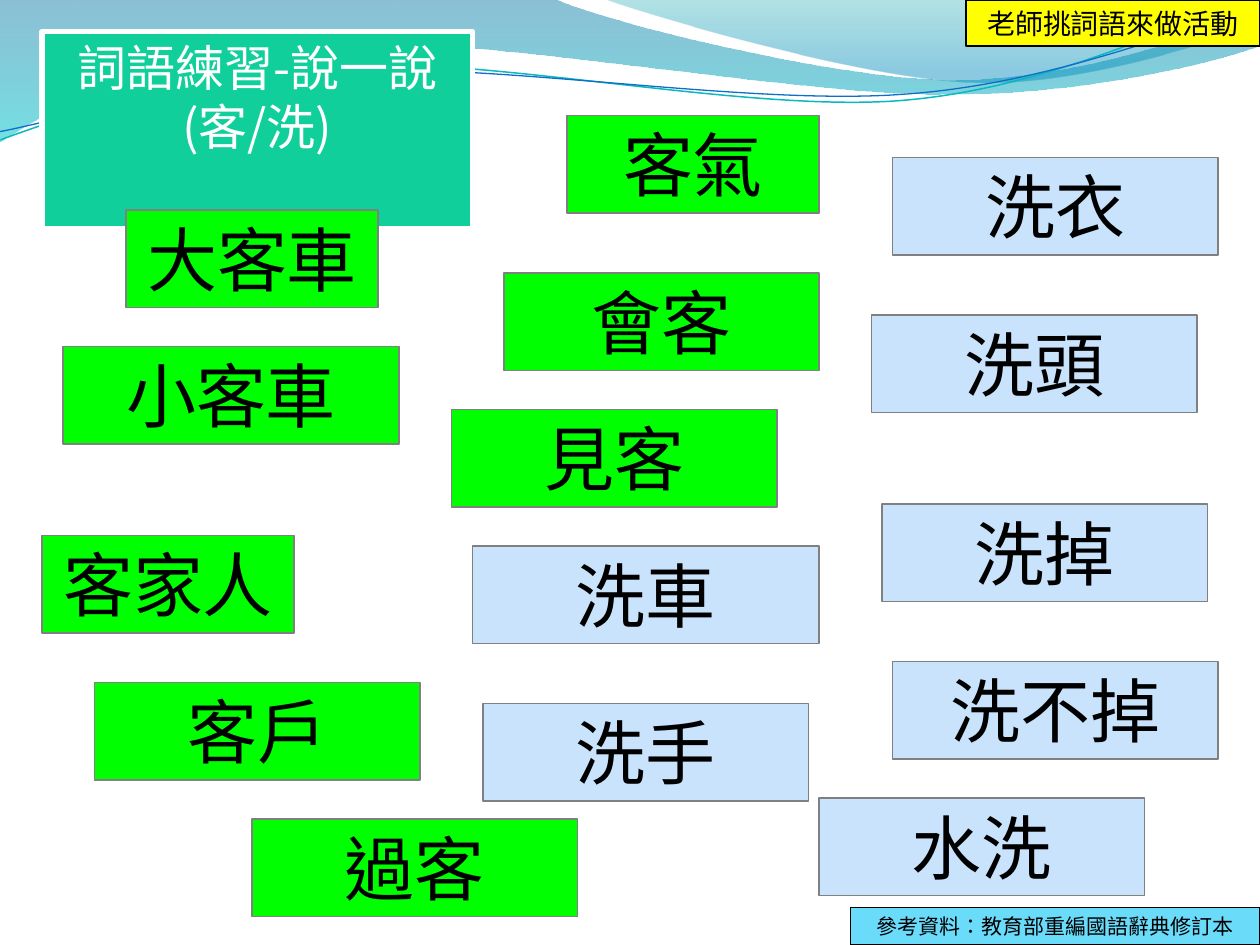
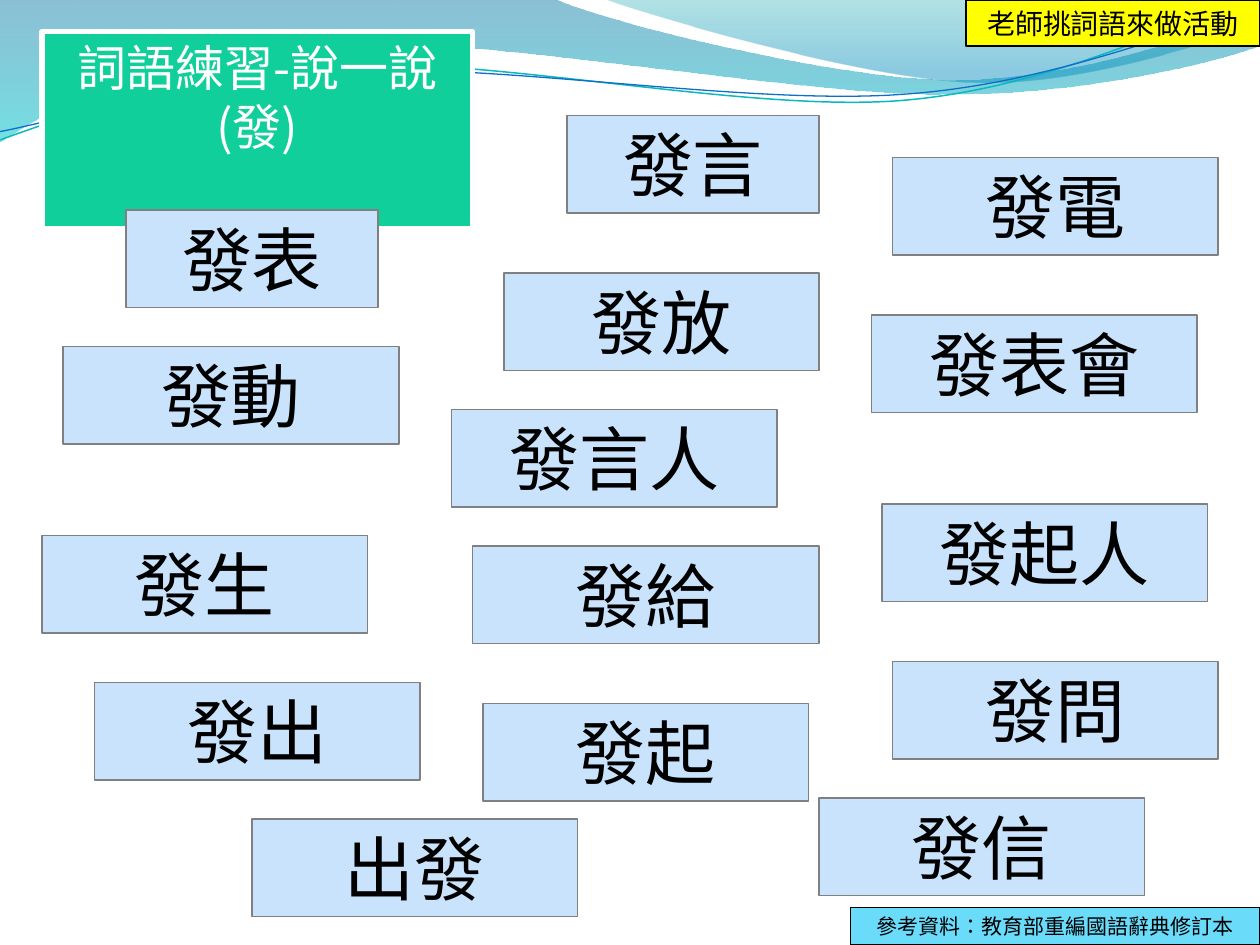
from dataclasses import dataclass

from lxml.etree import SubElement
from pptx import Presentation
from pptx.dml.color import RGBColor
from pptx.enum.lang import MSO_LANGUAGE_ID
from pptx.enum.shapes import MSO_SHAPE
from pptx.enum.text import MSO_ANCHOR, MSO_AUTO_SIZE, PP_ALIGN
from pptx.oxml.ns import qn
from pptx.util import Pt

PX = 7620  # 120 px to the inch


@dataclass(frozen=True)
class Theme:
    font: str = "Noto Sans CJK SC"
    black: str = "000000"
    white: str = "FFFFFF"
    gray: str = "808080"
    green: str = "00FF00"
    pale: str = "C8E3FB"
    teal: str = "10CF9B"
    yellow: str = "FFFF00"
    sky: str = "6BDBFA"
    aqua: str = "0AB8BF"
    blue: str = "0F6FC6"
    head: int = 28
    word: int = 40
    hint: int = 16
    note: int = 12


THEME = Theme()

# Bands: start, then curves of three points or lines of one point;
# gradient stops are position, colour, opacity in percent.
BANDS = [
    ((0, 0),
     [[(528, -1)],
      [(571, 20), (797, 76), (910, 76)],
      [(1024, 76), (1150, 31), (1200, 11)],
      [(1201, 43)],
      [(1180, 53), (1044, 91), (895, 90)],
      [(746, 90), (458, 34), (308, 41)],
      [(155, 43), (55, 100), (-1, 136)],
      [(0, 0)]],
     [(0, "0074A1", 45), (1, "00C6CF", 55)]),
    ((575, -1),
     [[(611, 13), (818, 74), (923, 78)],
      [(1027, 83), (1153, 38), (1200, 25)],
      [(1200, 0)],
      [(575, -1)]],
     [(0, "00A1A9", 30), (0.8, "008BBF", 45)]),
]
TILT = 357.3
WAVES = [
    ((-2, 105),
     [[(57, 86), (190, 49), (333, 49)],
      [(475, 50), (710, 112), (854, 108)],
      [(999, 104), (1128, 43), (1201, 26)]],
     THEME.aqua, 0.85),
    ((-2, 97),
     [[(55, 89), (197, 54), (340, 55)],
      [(485, 56), (714, 106), (859, 102)],
      [(1002, 99), (1131, 50), (1202, 35)]],
     THEME.blue, 0.75),
]

# Left, top and width of each word card, column by column
CARD = 93
SPOTS = [
    (120, 200, 240), (60, 330, 320), (40, 510, 310), (90, 650, 310),
    (240, 780, 310),
    (540, 110, 240), (480, 260, 300), (430, 390, 310), (450, 520, 330),
    (460, 670, 310),
    (850, 150, 310), (830, 300, 310), (840, 480, 310), (850, 630, 310),
    (780, 760, 310),
]
SLIM = {"客家人": 240}

PAGES = [
    ("詞語練習-說一說(客/洗)",
     "大客車 小客車 客家人 客戶 過客 客氣 會客 見客 洗車 洗手 "
     "洗衣 洗頭 洗掉 洗不掉 水洗"),
    ("詞語練習-說一說(發)",
     "發表 發動 發生 發出 出發 發言 發放 發言人 發給 發起 "
     "發電 發表會 發起人 發問 發信"),
]


def rgb(code):
    return RGBColor.from_string(code)


def place(shape, left, top, width, height):
    shape.left, shape.top = left * PX, top * PX
    shape.width, shape.height = width * PX, height * PX


def paint(shape, fill, line, weight):
    shape.fill.solid()
    shape.fill.fore_color.rgb = rgb(fill)
    shape.line.color.rgb = rgb(line)
    shape.line.width = Pt(weight)
    shape.shadow.inherit = False


def write(shape, text, size, color):
    frame = shape.text_frame
    frame.word_wrap = True
    frame.auto_size = MSO_AUTO_SIZE.SHAPE_TO_FIT_TEXT
    frame.vertical_anchor = MSO_ANCHOR.TOP
    para = frame.paragraphs[0]
    para.alignment = PP_ALIGN.CENTER
    run = para.add_run()
    run.text = text
    run.font.size = Pt(size)
    run.font.color.rgb = rgb(color)
    run.font.name = THEME.font
    run.font.language_id = MSO_LANGUAGE_ID.TAIWAN if hasattr(
        MSO_LANGUAGE_ID, "TAIWAN") else MSO_LANGUAGE_ID.TRADITIONAL_CHINESE
    for props in shape.element.iter(qn("a:rPr")):
        SubElement(props, qn("a:ea"), typeface=THEME.font)


def label(slide, box, text, fill, line, size):
    shape = slide.shapes.add_shape(MSO_SHAPE.RECTANGLE, 0, 0, 0, 0)
    place(shape, *box)
    paint(shape, fill, line, 0.75)
    write(shape, text, size, THEME.black)


def title(slide, text):
    shape = slide.shapes.title
    place(shape, 40, 30, 410, 125)
    paint(shape, THEME.teal, THEME.white, 3)
    write(shape, text, THEME.head, THEME.white)


def outline(slide, start, parts, close):
    """Draw the outline, turning each three-point part into a true curve."""
    pen = slide.shapes.build_freeform(*start, scale=PX)
    pen.add_line_segments([spot for part in parts for spot in part],
                          close=close)
    shape = pen.convert_to_shape()
    shape.shadow.inherit = False
    lines = iter(list(shape.element.iter(qn("a:lnTo"))))
    for part in parts:
        group = [next(lines) for _ in part]
        if len(part) == 3:
            curve = group[0].makeelement(qn("a:cubicBezTo"))
            group[0].addprevious(curve)
            for line in group:
                curve.append(line[0])
                line.getparent().remove(line)
    return shape


def band(slide, start, parts, stops):
    shape = outline(slide, start, parts, True)
    shape.line.fill.background()
    shape.fill.gradient()
    shape.fill.gradient_angle = 270
    for stop, (spot, color, _) in zip(shape.fill.gradient_stops, stops):
        stop.position = spot
        stop.color.rgb = rgb(color)
    for tint, (_, _, alpha) in zip(shape.element.iter(qn("a:srgbClr")), stops):
        SubElement(tint, qn("a:alpha"), val=str(alpha * 1000))
    return shape


def wave(slide, start, parts, color, weight):
    shape = outline(slide, start, parts, False)
    shape.rotation = TILT
    shape.fill.background()
    shape.line.color.rgb = rgb(color)
    shape.line.width = Pt(weight)
    return shape


def dress(layout, slide):
    """Draw the top waves with the slide's pen and move them to the layout."""
    decor = [band(slide, *item) for item in BANDS]
    decor += [wave(slide, *item) for item in WAVES]
    for rank, shape in enumerate(decor, 2):
        layout.shapes.element.insert(rank, shape.element)


def fill_page(slide, head, words):
    title(slide, head)
    for word, (left, top, width) in zip(words.split(), SPOTS):
        fill = THEME.green if "客" in word else THEME.pale
        box = (left, top, SLIM.get(word, width), CARD)
        label(slide, box, word, fill, THEME.gray, THEME.word)
    label(slide, (920, 0, 280, 44), "老師挑詞語來做活動",
          THEME.yellow, THEME.black, THEME.hint)
    label(slide, (810, 864, 390, 36), "參考資料：教育部重編國語辭典修訂本",
          THEME.sky, THEME.black, THEME.note)


def main():
    deck = Presentation()
    deck.slide_width, deck.slide_height = 1200 * PX, 900 * PX
    layout = deck.slide_layouts[5]
    slides = [deck.slides.add_slide(layout) for _ in PAGES]
    dress(layout, slides[0])
    for slide, page in zip(slides, PAGES):
        fill_page(slide, *page)
    deck.save("out.pptx")


if __name__ == "__main__":
    main()
